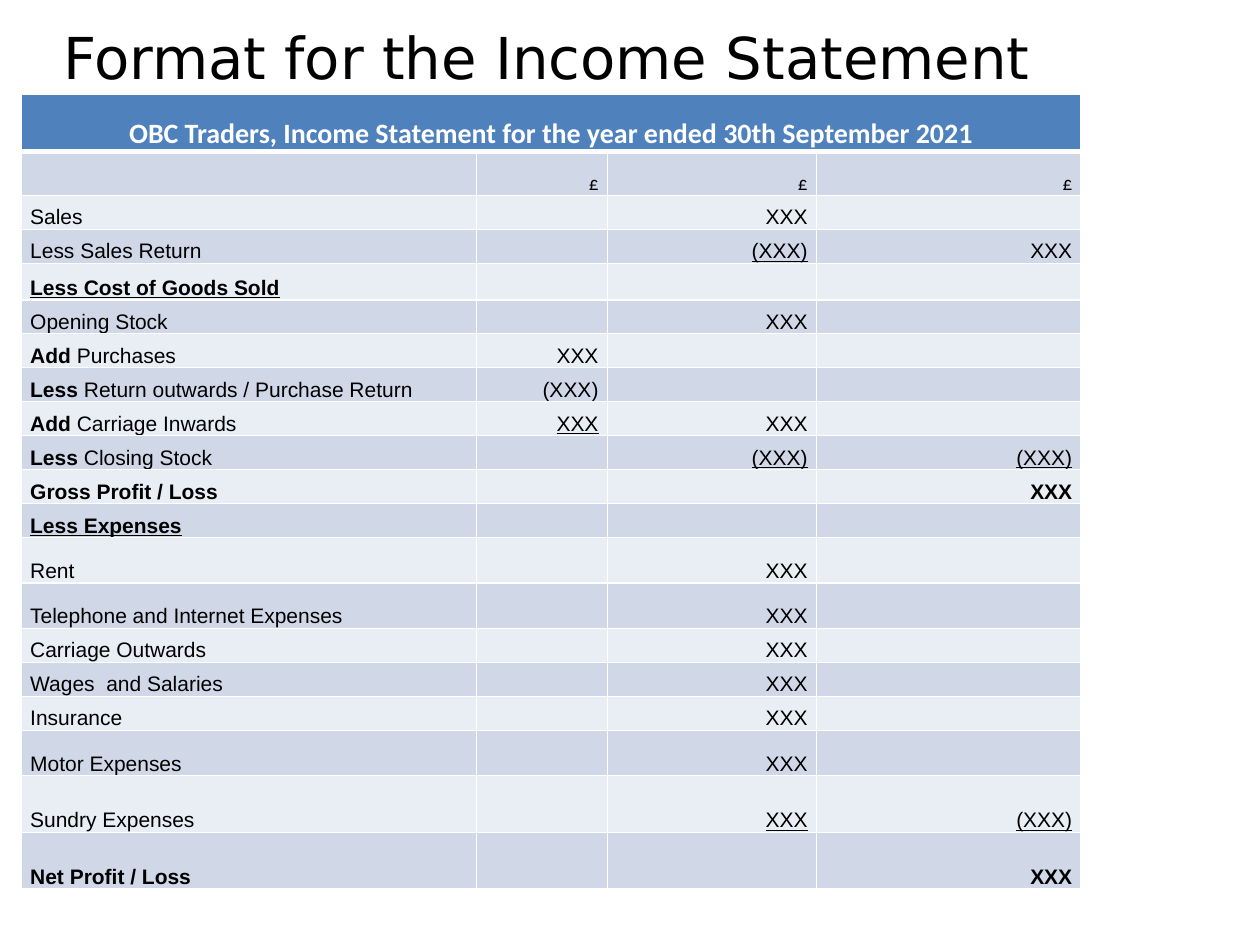
"""Build a slide with the format of an income statement."""
from lxml.etree import SubElement
from pptx import Presentation
from pptx.dml.color import RGBColor
from pptx.enum.text import MSO_ANCHOR as Anchor, MSO_AUTO_SIZE as AutoSize, PP_ALIGN as Align
from pptx.oxml.ns import qn
from pptx.util import Inches, Pt

BLACK = RGBColor(0x00, 0x00, 0x00)
WHITE = RGBColor(0xFF, 0xFF, 0xFF)
HEADER_BLUE = RGBColor(0x4F, 0x81, 0xBD)
BAND_DARK = RGBColor(0xD0, 0xD8, 0xE8)
BAND_LIGHT = RGBColor(0xE9, 0xED, 0xF4)

HEADING = "OBC Traders, Income Statement for the year ended 30th September 2021"
COLUMN_WIDTHS = [3.61, 1.04, 1.66, 2.1]
# Each row: height, bold label, plain label, three amounts; a leading "_" underlines.
ROWS = [
    (0.45, HEADING, "", "", "", ""),
    (0.35, "", "", "£", "£", "£"),
    (0.27, "", "Sales", "", "XXX", ""),
    (0.27, "", "Less Sales Return", "", "_(XXX)", "XXX"),
    (0.29, "_Less Cost of Goods Sold", "", "", "", ""),
    (0.27, "", "Opening Stock", "", "XXX", ""),
    (0.27, "Add ", "Purchases", "XXX", "", ""),
    (0.27, "Less", " Return outwards / Purchase Return", "(XXX)", "", ""),
    (0.27, "Add", " Carriage Inwards", "_XXX", "XXX", ""),
    (0.27, "Less", " Closing Stock", "", "_(XXX)", "_(XXX)"),
    (0.27, "Gross Profit / Loss", "", "", "", "XXX"),
    (0.27, "_Less Expenses", "", "", "", ""),
    (0.36, "", "Rent", "", "XXX", ""),
    (0.36, "", "Telephone and Internet Expenses", "", "XXX", ""),
    (0.27, "", "Carriage Outwards", "", "XXX", ""),
    (0.27, "", "Wages  and Salaries", "", "XXX", ""),
    (0.27, "", "Insurance", "", "XXX", ""),
    (0.36, "", "Motor Expenses", "", "XXX", ""),
    (0.45, "", "Sundry Expenses", "", "_XXX", "_(XXX)"),
    (0.45, "Net Profit / Loss", "", "", "", "XXX"),
]
HEADER_FONT = {"name": "Calibri", "size": Pt(16)}
CURRENCY_FONT = {"name": "Calibri", "size": Pt(11)}
BODY_FONT = {"name": "Arial", "size": Pt(12)}
CELL_FORMAT = {
    "vertical_anchor": Anchor.BOTTOM,
    "margin_left": Inches(0.07),
    "margin_right": Inches(0.07),
    "margin_top": 0,
    "margin_bottom": 0,
}


def set_borders(cell, bottom_width):
    properties = cell._tc.get_or_add_tcPr()
    for side, width in (("L", 1), ("R", 1), ("T", 1), ("B", bottom_width)):
        line = SubElement(properties, qn(f"a:ln{side}"), w=str(Pt(width)))
        fill = SubElement(line, qn("a:solidFill"))
        SubElement(fill, qn("a:srgbClr"), val=str(WHITE))


def add_text(paragraph, text, font_format, color, bold):
    run = paragraph.add_run()
    run.text = text.removeprefix("_")
    run.font.color.rgb = color
    run.font.bold = bold
    run.font.underline = text.startswith("_")
    for name, value in font_format.items():
        setattr(run.font, name, value)


presentation = Presentation()
presentation.slide_width = Inches(10)
presentation.slide_height = Inches(7.5)
slide = presentation.slides.add_slide(presentation.slide_layouts[5])

title = slide.shapes.title
title.left, title.top, title.width, title.height = map(Inches, (0.5, 0.17, 8.08, 0.56))
frame = title.text_frame
frame_format = {
    "margin_left": 0,
    "margin_top": 0,
    "margin_right": 0,
    "margin_bottom": 0,
    "word_wrap": True,
    "auto_size": AutoSize.SHAPE_TO_FIT_TEXT,
    "vertical_anchor": Anchor.TOP,
}
for name, value in frame_format.items():
    setattr(frame, name, value)
frame.paragraphs[0].alignment = Align.LEFT
title_font = {"name": "DejaVu Sans", "size": Pt(33)}
add_text(frame.paragraphs[0], "Format for the Income Statement", title_font, BLACK, False)

table = slide.shapes.add_table(
    len(ROWS), len(COLUMN_WIDTHS), Inches(0.17), Inches(0.75), Inches(8.42), Inches(6.33)
).table
for column, width in zip(table.columns, COLUMN_WIDTHS):
    column.width = Inches(width)

for row_index, (height, bold_label, plain_label, *amounts) in enumerate(ROWS):
    table.rows[row_index].height = Inches(height)
    is_header = row_index == 0
    band = HEADER_BLUE if is_header else BAND_DARK if row_index % 2 else BAND_LIGHT
    font_format = {0: HEADER_FONT, 1: CURRENCY_FONT}.get(row_index, BODY_FONT)
    is_total = bool(bold_label) and not plain_label
    labels = [(bold_label, True), (plain_label, False)]
    contents = [labels] + [[(amount, is_total)] for amount in amounts]
    for column_index, pieces in enumerate(contents):
        cell = table.cell(row_index, column_index)
        for name, value in CELL_FORMAT.items():
            setattr(cell, name, value)
        set_borders(cell, 3 if is_header else 1)
        cell.fill.solid()
        cell.fill.fore_color.rgb = band
        paragraph = cell.text_frame.paragraphs[0]
        paragraph.line_spacing = 1.15
        paragraph.alignment = Align.CENTER if is_header else Align.RIGHT if column_index else Align.LEFT
        for text, bold in pieces:
            if text:
                add_text(paragraph, text, font_format, WHITE if is_header else BLACK, bold)
        if not paragraph.runs:
            SubElement(paragraph._p, qn("a:endParaRPr"), sz="1200")

table.cell(0, 0).merge(table.cell(0, len(COLUMN_WIDTHS) - 1))
presentation.save("out.pptx")
